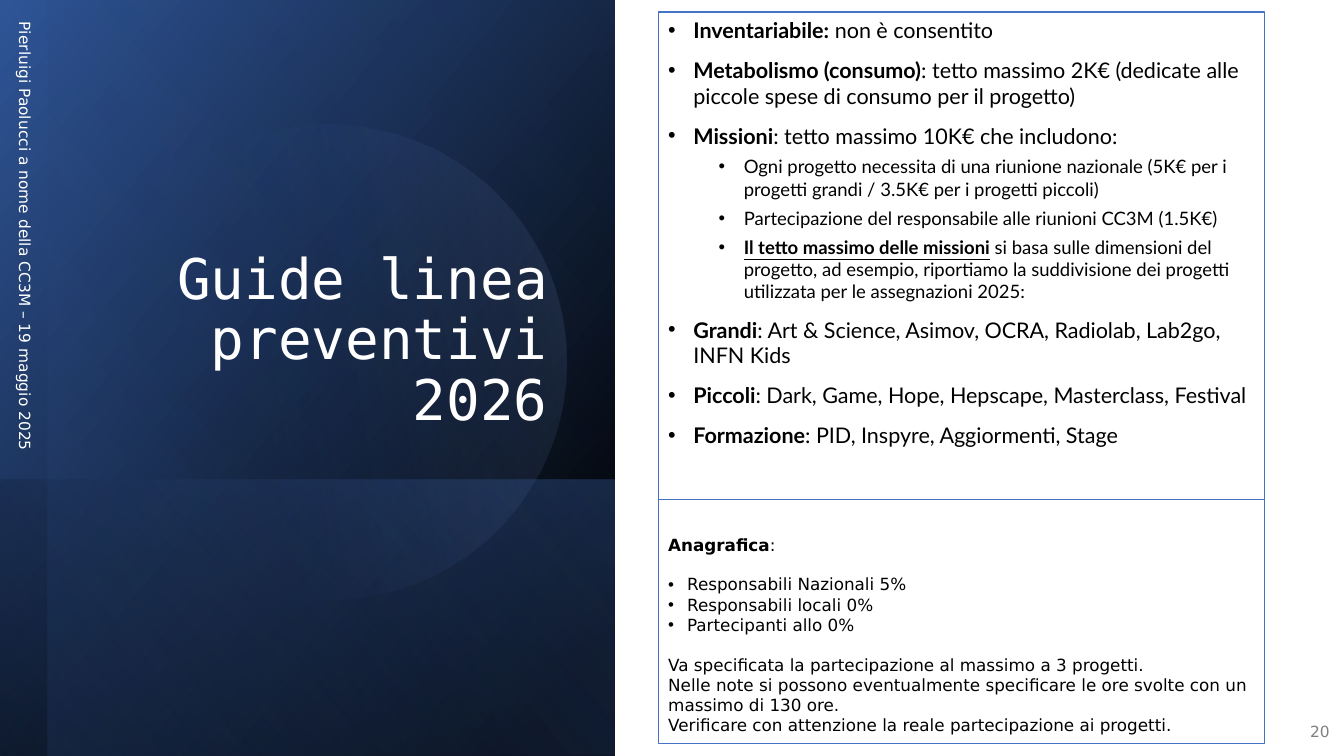
import pptx
import pptx.util
import pptx.dml.color
import pptx.enum.shapes
import pptx.enum.text
import pptx.oxml
import pptx.oxml.ns
from dataclasses import dataclass

Pt = pptx.util.Pt
Shape = pptx.enum.shapes.MSO_SHAPE
Anchor = pptx.enum.text.MSO_ANCHOR
Align = pptx.enum.text.PP_ALIGN
qn = pptx.oxml.ns.qn


@dataclass(frozen=True)
class Theme:
    """Colours, fonts and type sizes of the slide."""
    black: str = "000000"
    white: str = "FFFFFF"
    grey: str = "808080"
    blue: str = "4472C4"
    navy: str = "2F5597"
    sky: str = "8FAADC"
    sans: str = "DejaVu Sans"
    mono: str = "DejaVu Sans Mono"
    lato: str = "Lato"
    head: float = 40
    main: float = 15.4
    sub: float = 13.2
    note: float = 12
    small: float = 11


class Deck:
    """Draws themed elements on the current slide."""

    def __init__(self, theme):
        self.theme = theme
        self.file = pptx.Presentation()
        self.file.slide_width, self.file.slide_height = Pt(960), Pt(540)
        self.slide = self.file.slides.add_slide(self.file.slide_layouts[6])

    def glow(self, kind, box, turn, angle, stops):
        """Add a mirrored, turned shape with a gradient; box is its visible frame."""
        x, y, w, h = box
        wide, tall = (h, w) if turn == 90 else (w, h)
        shape = self.slide.shapes.add_shape(
            kind, Pt(x + (w - wide) / 2), Pt(y + (h - tall) / 2), Pt(wide), Pt(tall))
        shape.shadow.inherit = False
        shape.line.fill.background()
        shape.rotation = turn
        props = shape._element.spPr
        props.find(qn("a:xfrm")).set("flipH", "1")
        marks = "".join(
            f'<a:gs pos="{pos * 1000}"><a:srgbClr val="{tone}">'
            f'<a:alpha val="{alpha * 1000}"/></a:srgbClr></a:gs>'
            for pos, tone, alpha in stops)
        fill = pptx.oxml.parse_xml(
            f'<a:gradFill {pptx.oxml.ns.nsdecls("a")} rotWithShape="1"><a:gsLst>{marks}</a:gsLst>'
            f'<a:lin ang="{angle * 60000}" scaled="0"/></a:gradFill>')
        props.find(qn("a:prstGeom")).addnext(fill)

    def text(self, box, anchor=Anchor.TOP, turn=0, edge=False, top=3.6):
        """Add a wrapping text box and return its text frame."""
        shape = self.slide.shapes.add_textbox(*map(Pt, box))
        shape.rotation = turn
        if edge:
            shape.line.color.rgb = pptx.dml.color.RGBColor.from_string(self.theme.blue)
            shape.line.width = Pt(0.75)
        frame = shape.text_frame
        frame.word_wrap = True
        frame.vertical_anchor = anchor
        frame.margin_top = Pt(top)
        return frame

    def para(self, frame, runs, font, size, tone, align=Align.LEFT,
             before=0, after=0, lines=1.0, left=0, hang=0):
        """Add a paragraph of (text, style) runs; hang sets a bullet."""
        first = frame.paragraphs[0]
        para = frame.add_paragraph() if first.runs else first
        para.alignment = align
        para.space_before, para.space_after = Pt(before), Pt(after)
        para.line_spacing = lines
        if hang:
            props = para._p.get_or_add_pPr()
            props.set("marL", str(Pt(left)))
            props.set("indent", str(Pt(-hang)))
            props.append(pptx.oxml.parse_xml(
                f'<a:buFont {pptx.oxml.ns.nsdecls("a")} typeface="Arial"/>'))
            props.append(pptx.oxml.parse_xml(
                f'<a:buChar {pptx.oxml.ns.nsdecls("a")} char="•"/>'))
        for words, style in runs:
            run = para.add_run()
            run.text = words
            run.font.name, run.font.size = font, Pt(size)
            run.font.color.rgb = pptx.dml.color.RGBColor.from_string(tone)
            run.font.bold = "b" in style
            run.font.underline = "u" in style


RULES = [
    (0, [("Inventariabile:", "b"), (" non è consentito", "")]),
    (0, [("Metabolismo (consumo)", "b"),
         (": tetto massimo 2K€ (dedicate alle piccole spese di consumo per il progetto)", "")]),
    (0, [("Missioni", "b"), (": tetto massimo 10K€ che includono:", "")]),
    (1, [("Ogni progetto necessita di una riunione nazionale "
          "(5K€ per i progetti grandi / 3.5K€ per i progetti piccoli)", "")]),
    (1, [("Partecipazione del responsabile alle riunioni CC3M (1.5K€)", "")]),
    (1, [("Il tetto massimo delle missioni", "bu"),
         (" si basa sulle dimensioni del progetto, ad esempio, riportiamo la suddivisione "
          "dei progetti utilizzata per le assegnazioni 2025:", "")]),
    (0, [("Grandi", "b"), (": Art & Science, Asimov, OCRA, Radiolab, Lab2go, INFN Kids", "")]),
    (0, [("Piccoli", "b"), (": Dark, Game, Hope, Hepscape, Masterclass, Festival", "")]),
    (0, [("Formazione", "b"), (": PID, Inspyre, Aggiormenti, Stage", "")]),
]

NOTES = [
    (0, 0, [("Anagrafica", "b"), (":", "")]),
    (14, 13.5, [("Responsabili Nazionali 5%", "")]),
    (0, 13.5, [("Responsabili locali 0%", "")]),
    (0, 13.5, [("Partecipanti allo 0%", "")]),
    (14, 0, [("Va specificata la partecipazione al massimo a 3 progetti.", "")]),
    (0, 0, [("Nelle note si possono eventualmente specificare le ore svolte "
             "con un massimo di 130 ore.", "")]),
    (0, 0, [("Verificare con attenzione la reale partecipazione ai progetti.", "")]),
]


def main():
    """Build and save the slide."""
    look = Theme()
    deck = Deck(look)
    rect = Shape.RECTANGLE
    deck.glow(rect, (0, 0, 439.2, 540), 90, 50,
              [(8, look.black, 100), (100, look.navy, 100)])
    deck.glow(rect, (0, 342.7, 439.2, 197.3), 90, 130,
              [(2, look.blue, 29), (100, look.black, 30)])
    deck.glow(rect, (34, 0, 405.2, 540), 90, 130,
              [(0, look.black, 0), (99, look.blue, 11)])
    deck.glow(Shape.OVAL, (64.8, 88.6, 339.8, 339.8), 101.6, 290,
              [(39, look.blue, 0), (100, look.sky, 15)])

    title = deck.text((64.8, 46, 333.4, 266.4), Anchor.BOTTOM)
    deck.para(title, [("Guide linea preventivi 2026", "")], look.mono, look.head,
              look.white, Align.RIGHT, lines=0.9)
    side = deck.text((-144, 156.2, 324, 28.8), Anchor.MIDDLE, 90)
    deck.para(side, [("Pierluigi Paolucci a nome della CC3M – 19 maggio 2025", "")],
              look.sans, look.small, look.white, after=6)
    page = deck.text((921.6, 508.3, 35.3, 28.8), Anchor.MIDDLE)
    deck.para(page, [("20", "")], look.sans, look.small, look.grey, Align.RIGHT, after=6)

    rules = deck.text((470.2, 8.6, 432.7, 348.5), edge=True)
    for level, runs in RULES:
        size, before, left = ((look.main, 10, 18), (look.sub, 5, 54))[level]
        deck.para(rules, runs, look.lato, size, look.black,
                  before=before, left=left, hang=18)

    notes = deck.text((470.2, 357.1, 432.7, 174.2), edge=True, top=24.6)
    for before, hang, runs in NOTES:
        deck.para(notes, runs, look.sans, look.note, look.black,
                  before=before, left=hang, hang=hang)

    deck.file.save("out.pptx")


if __name__ == "__main__":
    main()
